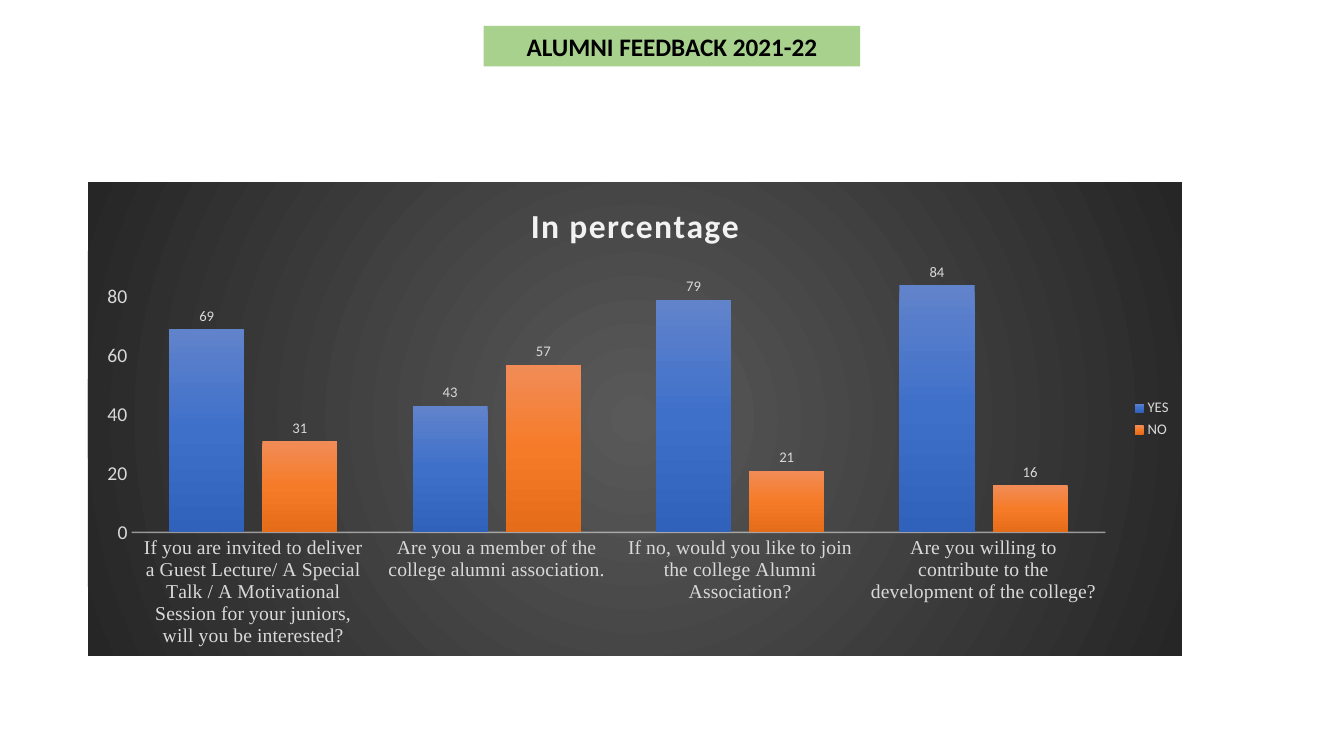
import pptx
import pptx.chart.data
import pptx.dml.color
import pptx.enum.chart
import pptx.enum.text
import pptx.oxml
import pptx.oxml.ns
import pptx.util
from pptx.util import Pt

# Content
HEADING = "ALUMNI FEEDBACK 2021-22"
CHART_TITLE = "In percentage"
QUESTIONS = [
    "If you are invited to deliver a Guest Lecture/ A Special Talk / A Motivational "
    "Session for your juniors, will you be interested?",
    "Are you a member of the college alumni association.",
    "If no, would you like to join the college Alumni Association?",
    "Are you willing to contribute to the development of the college?",
]
ANSWERS = {"YES": (69, 43, 79, 84), "NO": (31, 57, 21, 16)}

COLORS = {"heading": "A9D18E", "black": "000000", "text": "D9D9D9", "title": "F2F2F2"}
GRADIENTS = {
    "YES": ("6183CB", "3E70CA", "3062BB"),
    "NO": ("F18C57", "F67B28", "E56C19"),
    "background": ("595959", "262626"),
}
LINEAR = '<a:lin ang="5400000" scaled="0"/>'
RADIAL = '<a:path path="circle"><a:fillToRect l="50000" t="50000" r="50000" b="50000"/></a:path>'
NAMESPACES = pptx.oxml.ns.nsdecls("a", "c")


def rgb(name):
    return pptx.dml.color.RGBColor.from_string(COLORS[name])


def set_font(font, size, color="text", name="Calibri", bold=False):
    font.size, font.name, font.bold = Pt(size), name, bold
    font.color.rgb = rgb(color)


def gradient(name, direction):
    stops = GRADIENTS[name]
    items = "".join(
        f'<a:gs pos="{100000 * i // (len(stops) - 1)}"><a:srgbClr val="{stop}"/></a:gs>'
        for i, stop in enumerate(stops))
    return pptx.oxml.parse_xml(
        f'<a:gradFill {NAMESPACES} rotWithShape="1"><a:gsLst>{items}</a:gsLst>{direction}</a:gradFill>')


presentation = pptx.Presentation()
presentation.slide_width, presentation.slide_height = Pt(960), Pt(540)
slide = presentation.slides.add_slide(presentation.slide_layouts[5])

# Heading
heading = slide.shapes.title
heading.left, heading.top, heading.width, heading.height = Pt(345.5), Pt(18.5), Pt(269), Pt(29)
heading.fill.solid()
heading.fill.fore_color.rgb = rgb("heading")
heading.text_frame.text = HEADING
heading.text_frame.auto_size = pptx.enum.text.MSO_AUTO_SIZE.NONE
heading.text_frame.vertical_anchor = pptx.enum.text.MSO_ANCHOR.MIDDLE
paragraph = heading.text_frame.paragraphs[0]
paragraph.alignment = pptx.enum.text.PP_ALIGN.CENTER
set_font(paragraph.font, 18, "black", bold=True)

# Chart
chart_data = pptx.chart.data.CategoryChartData()
chart_data.categories = QUESTIONS
for answer, values in ANSWERS.items():
    chart_data.add_series(answer, values)
chart = slide.shapes.add_chart(
    pptx.enum.chart.XL_CHART_TYPE.COLUMN_CLUSTERED,
    Pt(62.75), Pt(130.25), Pt(781.5), Pt(338), chart_data).chart
set_font(chart.font, 10, "black")

# Chart background
background = pptx.oxml.parse_xml(f"<c:spPr {NAMESPACES}><a:ln><a:noFill/></a:ln></c:spPr>")
background.insert(0, gradient("background", RADIAL))
chart.font._element.getparent().getparent().getparent().addprevious(background)

# Chart title
chart.has_title = True
chart.chart_title.include_in_layout = False
title_frame = chart.chart_title.text_frame
title_frame.text = CHART_TITLE
title_font = title_frame.paragraphs[0].runs[0].font
set_font(title_font, 24, "title", bold=True)
title_font._element.set("spc", "100")

# Columns and labels
plot = chart.plots[0]
plot.gap_width, plot.overlap, plot.vary_by_categories = 100, -24, False
for series in plot.series:
    series.format.line.fill.background()
    series._element.get_or_add_spPr().insert(0, gradient(series.name, LINEAR))
    series.invert_if_negative = False
    labels = series.data_labels
    labels.show_value = True
    labels.position = pptx.enum.chart.XL_LABEL_POSITION.OUTSIDE_END
    set_font(labels.font, 10.5)

# Axes
for axis, font_name in ((chart.category_axis, "Times New Roman"), (chart.value_axis, "Calibri")):
    axis.major_tick_mark = axis.minor_tick_mark = pptx.enum.chart.XL_TICK_MARK.NONE
    axis.has_major_gridlines = False
    set_font(axis.tick_labels.font, 14, name=font_name)
chart.value_axis.minimum_scale, chart.value_axis.maximum_scale = 0, 90
chart.value_axis.major_unit = 20
chart.value_axis.format.line.fill.background()
axis_line = chart.category_axis.format.line
axis_line.width = Pt(1)
axis_line.color.rgb = rgb("title")
line_color = chart.category_axis._element.find(".//" + pptx.oxml.ns.qn("a:ln")).find(
    ".//" + pptx.oxml.ns.qn("a:srgbClr"))
line_color.append(pptx.oxml.parse_xml(f'<a:alpha {NAMESPACES} val="54000"/>'))

# Legend
chart.has_legend = True
chart.legend.position = pptx.enum.chart.XL_LEGEND_POSITION.RIGHT
chart.legend.include_in_layout = False
set_font(chart.legend.font, 10.5)

# Plot area as fractions of the chart
plot_area = plot._element.getparent()
for layout in plot_area.findall(pptx.oxml.ns.qn("c:layout")):
    plot_area.remove(layout)
fractions = "".join(
    f'<c:{key} val="{value}"/>'
    for key, value in (("x", 0.04), ("y", 0.18), ("w", 0.89), ("h", 0.56)))
plot_area.insert(0, pptx.oxml.parse_xml(
    f'<c:layout {NAMESPACES}><c:manualLayout><c:layoutTarget val="inner"/>'
    f'<c:xMode val="edge"/><c:yMode val="edge"/>{fractions}</c:manualLayout></c:layout>'))

presentation.save("out.pptx")
